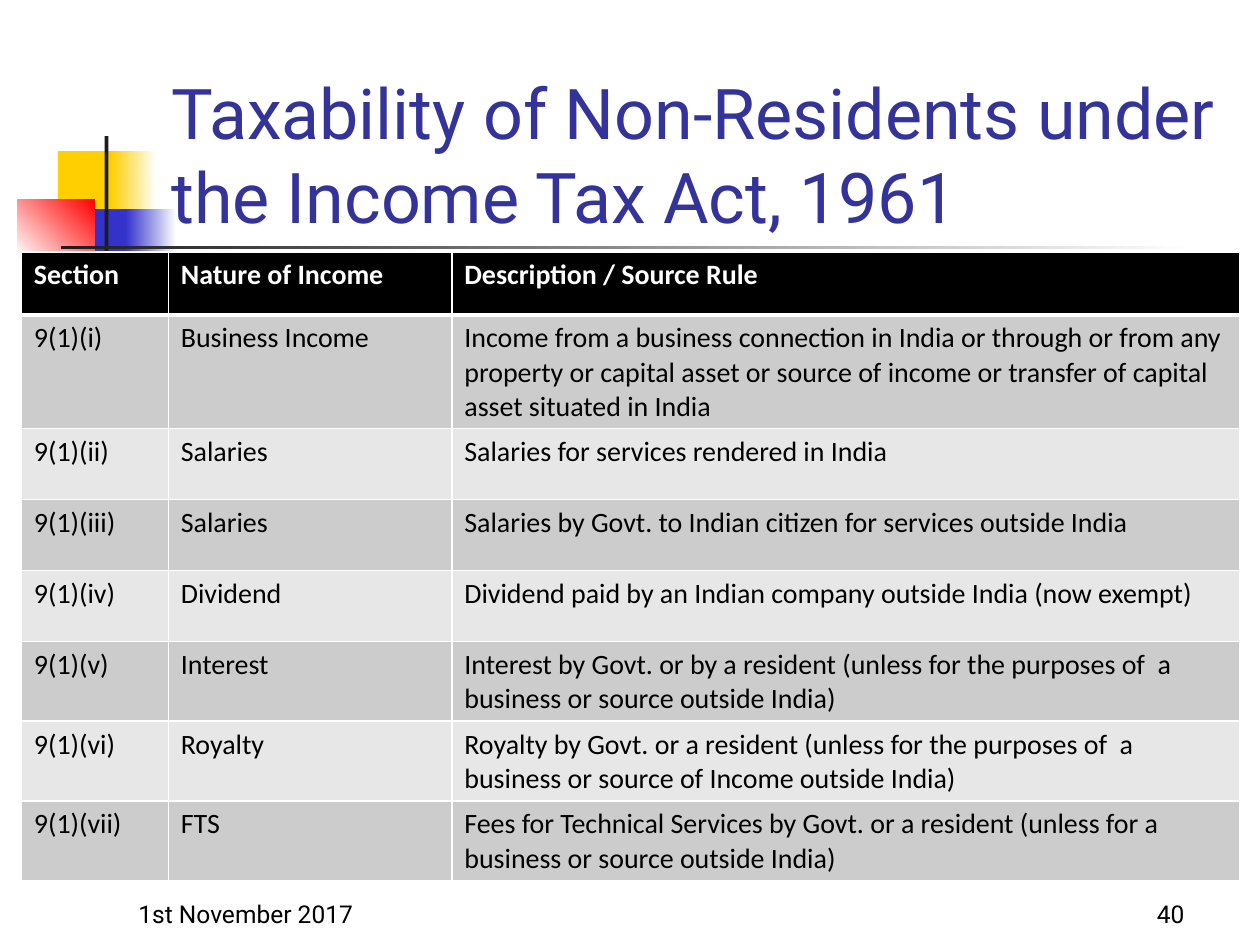
from lxml.etree import SubElement as Sub
from pptx import Presentation
from pptx.dml.color import RGBColor as RGB
from pptx.enum.shapes import MSO_SHAPE as Shape
from pptx.enum.text import MSO_ANCHOR as Anchor, PP_ALIGN as Align
from pptx.oxml.ns import qn
from pptx.util import Pt

WHITE = RGB(0xFF, 0xFF, 0xFF)
BLACK = RGB(0, 0, 0)
GOLD = RGB(0xFF, 0xCF, 0x01)
BLUE = RGB(0x33, 0x33, 0xCC)
RED = RGB(0xFF, 0, 0)
INK = RGB(0x1C, 0x1C, 0x1C)
NAVY = RGB(0x33, 0x33, 0x99)
DARK = RGB(0xCC, 0xCC, 0xCC)
LIGHT = RGB(0xE7, 0xE7, 0xE7)

BLOCKS = [
    ((33.1, 86.4, 34.6, 37.4), (GOLD,), 0),
    ((63.4, 86.4, 25.9, 37.4), (GOLD, WHITE), 0),
    ((42.5, 119.5, 33.1, 37.4), (BLUE,), 0),
    ((72, 119.5, 28.8, 37.4), (BLUE, WHITE), 0),
    ((10.1, 113.8, 43.9, 33.1), (WHITE, RED), 45),
    ((59.8, 77.8, 2.2, 82.8), (INK,), 0),
    ((34.6, 140.4, 648, 2.2), (INK, WHITE), 0),
]
WIDTHS = [84, 162, 450]
HEIGHTS = [36, 65, 40.5, 40.5, 40.5, 45.5, 45.5, 45.5]
ROWS = [
    ("Section", "Nature of Income", "Description / Source Rule"),
    ("9(1)(i)", "Business Income",
     "Income from a business connection in India or through or from any "
     "property or capital asset or source of income or transfer of capital "
     "asset situated in India"),
    ("9(1)(ii)", "Salaries", "Salaries for services rendered in India"),
    ("9(1)(iii)", "Salaries",
     "Salaries by Govt. to Indian citizen for services outside India"),
    ("9(1)(iv)", "Dividend",
     "Dividend paid by an Indian company outside India (now exempt)"),
    ("9(1)(v)", "Interest",
     "Interest by Govt. or by a resident (unless for the purposes of  a "
     "business or source outside India)"),
    ("9(1)(vi)", "Royalty",
     "Royalty by Govt. or a resident (unless for the purposes of  a "
     "business or source of Income outside India)"),
    ("9(1)(vii)", "FTS",
     "Fees for Technical Services by Govt. or a resident (unless for a "
     "business or source outside India)"),
]


def add_block(slide, box, tints, angle):
    block = slide.shapes.add_shape(Shape.RECTANGLE, *map(Pt, box))
    block.shadow.inherit = False
    block.line.fill.background()
    if len(tints) == 1:
        block.fill.solid()
        block.fill.fore_color.rgb = tints[0]
        return
    block.fill.gradient()
    block.fill.gradient_angle = angle
    for stop, tint in zip(block.fill.gradient_stops, tints):
        stop.color.rgb = tint


def add_run(para, text, size, face, color, bold=False):
    run = para.add_run()
    run.text = text
    font = run.font
    font.size, font.name, font.bold = Pt(size), face, bold
    font.color.rgb = color


def add_label(slide, box, text, size, color, align=Align.LEFT):
    frame = slide.shapes.add_textbox(*map(Pt, box)).text_frame
    frame.word_wrap = True
    frame.vertical_anchor = Anchor.BOTTOM
    para = frame.paragraphs[0]
    para.alignment = align
    add_run(para, text, size, "Roboto", color)


def add_edge(cell, side, width):
    props = cell._tc.get_or_add_tcPr()
    line = Sub(props, qn(f"a:ln{side}"), w=str(Pt(width)))
    Sub(Sub(line, qn("a:solidFill")), qn("a:srgbClr"), val=str(WHITE))


def fill_cell(cell, text, row):
    head = row == 0
    for side in "LRTB":
        thick = (side == "B" and head) or (side == "T" and row == 1)
        add_edge(cell, side, 3 if thick else 1)
    cell.fill.solid()
    cell.fill.fore_color.rgb = BLACK if head else DARK if row % 2 else LIGHT
    add_run(cell.text_frame.paragraphs[0], text, 16, "Calibri",
            WHITE if head else BLACK, head)


def add_grid(slide, left, top):
    grid = slide.shapes.add_table(
        len(ROWS), len(WIDTHS), Pt(left), Pt(top),
        Pt(sum(WIDTHS)), Pt(sum(HEIGHTS))).table
    for col, width in zip(grid.columns, WIDTHS):
        col.width = Pt(width)
    for row, height in zip(grid.rows, HEIGHTS):
        row.height = Pt(height)
    for r, texts in enumerate(ROWS):
        for c, text in enumerate(texts):
            fill_cell(grid.cell(r, c), text, r)


def main():
    deck = Presentation()
    deck.slide_width, deck.slide_height = Pt(720), Pt(540)
    slide = deck.slides.add_slide(deck.slide_layouts[6])
    for box, tints, angle in BLOCKS:
        add_block(slide, box, tints, angle)
    add_label(slide, (72, 498.2, 150, 36), "1st November 2017", 14, BLACK)
    add_label(slide, (534, 498.2, 150, 36), "40", 14, BLACK, Align.RIGHT)
    add_label(slide, (90.7, 49, 613.4, 90),
              "Taxability of Non-Residents under the Income Tax Act, 1961",
              40, NAVY)
    add_grid(slide, 12.2, 144)
    deck.save("out.pptx")


if __name__ == "__main__":
    main()
